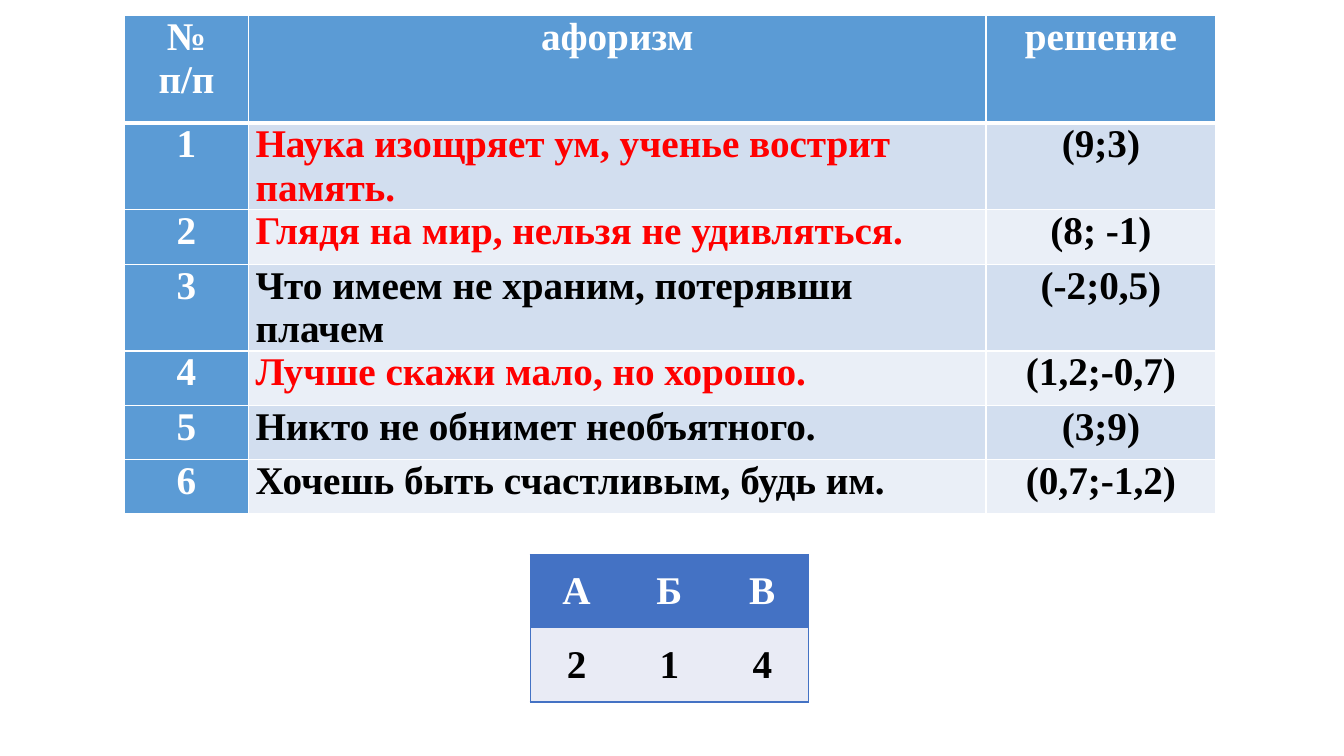
import lxml.etree
import pptx
import pptx.dml.color
import pptx.enum.text
import pptx.oxml.ns
import pptx.util

Cm = pptx.util.Cm
Pt = pptx.util.Pt
ALIGN = pptx.enum.text.PP_ALIGN
ANCHOR = pptx.enum.text.MSO_ANCHOR

WHITE, BLACK, RED = "FFFFFF", "000000", "FF0000"
HEAD_BLUE, BAND_DARK, BAND_LIGHT = "5B9BD5", "D2DEEF", "EAEFF7"
KEY_BLUE, KEY_LIGHT = "4472C4", "E9EBF5"

HEADINGS = ("№\nп/п", "афоризм", "решение")
APHORISMS = [
    ("Наука изощряет ум, ученье вострит память.", "(9;3)"),
    ("Глядя на мир, нельзя не удивляться.", "(8; -1)"),
    ("Что имеем не храним, потерявши плачем", "(-2;0,5)"),
    ("Лучше скажи мало, но хорошо.", "(1,2;-0,7)"),
    ("Никто не обнимет необъятного.", "(3;9)"),
    ("Хочешь быть счастливым, будь им.", "(0,7;-1,2)"),
]
KEY = {"А": 2, "Б": 1, "В": 4}


def rgb(color):
    return pptx.dml.color.RGBColor.from_string(color)


def set_borders(cell, **edges):
    """Draw the edges L, R, T, B given as (colour, points); hide the others."""
    qn = pptx.oxml.ns.qn
    props = cell._tc.get_or_add_tcPr()
    for i, side in enumerate("LRTB"):
        line = lxml.etree.Element(qn("a:ln" + side))
        props.insert(i, line)
        if side in edges:
            color, points = edges[side]
            line.set("w", str(Pt(points)))
            fill = lxml.etree.SubElement(line, qn("a:solidFill"))
            lxml.etree.SubElement(fill, qn("a:srgbClr"), val=color)
        else:
            lxml.etree.SubElement(line, qn("a:noFill"))


def fill_cell(cell, text, fill, color, align=ALIGN.CENTER, space=0):
    cell.fill.solid()
    cell.fill.fore_color.rgb = rgb(fill)
    tf = cell.text_frame
    tf.text = text
    for p in tf.paragraphs:
        p.alignment = align
        p.space_before = Pt(space)
        for r in p.runs:
            r.font.name = "Times New Roman"
            r.font.size = Pt(28)
            r.font.bold = True
            r.font.color.rgb = rgb(color)


def set_margins(cell, side, end):
    cell.margin_left = cell.margin_right = Cm(side)
    cell.margin_top = cell.margin_bottom = Cm(end)


def add_grid(s, left, top, widths, heights):
    frame = s.shapes.add_table(len(heights), len(widths), Cm(left), Cm(top),
                               Cm(sum(widths)), Cm(sum(heights)))
    table = frame.table
    for column, width in zip(table.columns, widths):
        column.width = Cm(width)
    for row, height in zip(table.rows, heights):
        row.height = Cm(height)
    return table


def add_aphorisms(s, left, top, widths, heights):
    table = add_grid(s, left, top, widths, heights)
    for j, heading in enumerate(HEADINGS):
        fill_cell(table.cell(0, j), heading, HEAD_BLUE, WHITE)
    for i, (aphorism, solution) in enumerate(APHORISMS, 1):
        band = BAND_DARK if i % 2 else BAND_LIGHT
        color = RED if i in KEY.values() else BLACK
        fill_cell(table.cell(i, 0), str(i), HEAD_BLUE, WHITE)
        fill_cell(table.cell(i, 1), aphorism, band, color, ALIGN.LEFT)
        fill_cell(table.cell(i, 2), solution, band, BLACK)
    thin, thick = (WHITE, 1), (WHITE, 3)
    for i in range(len(heights)):
        for j in range(len(widths)):
            cell = table.cell(i, j)
            set_margins(cell, 0.18, 0)
            set_borders(cell, L=thin, R=thin, T=thick if i == 1 else thin,
                        B=thick if i == 0 else thin)


def add_key(s, left, top, column_width, row_height):
    """Place the answer key: letters above the numbers of the aphorisms."""
    table = add_grid(s, left, top, [column_width] * len(KEY), [row_height] * 2)
    line = (KEY_BLUE, 1)
    last = len(KEY) - 1
    for j, (letter, number) in enumerate(KEY.items()):
        sides = {0: {"L": line}, last: {"R": line}}.get(j, {})
        rows = [(letter, KEY_BLUE, WHITE, "T"), (str(number), KEY_LIGHT, BLACK, "B")]
        for i, (text, fill, color, edge) in enumerate(rows):
            cell = table.cell(i, j)
            fill_cell(cell, text, fill, color, space=3.8)
            cell.vertical_anchor = ANCHOR.MIDDLE
            set_margins(cell, 0.1, 0.1)
            set_borders(cell, **sides, **{edge: line})


def main():
    prs = pptx.Presentation()
    prs.slide_width, prs.slide_height = Cm(33.87), Cm(19.05)
    s = prs.slides.add_slide(prs.slide_layouts[6])
    add_aphorisms(s, 3.14, 0.38, [3.12, 18.59, 5.79],
                  [2.72, 1.98, 1.37, 1.8, 1.37, 1.37, 1.37])
    add_key(s, 13.36, 13.97, 2.34, 1.86)
    prs.save("out.pptx")


if __name__ == "__main__":
    main()
